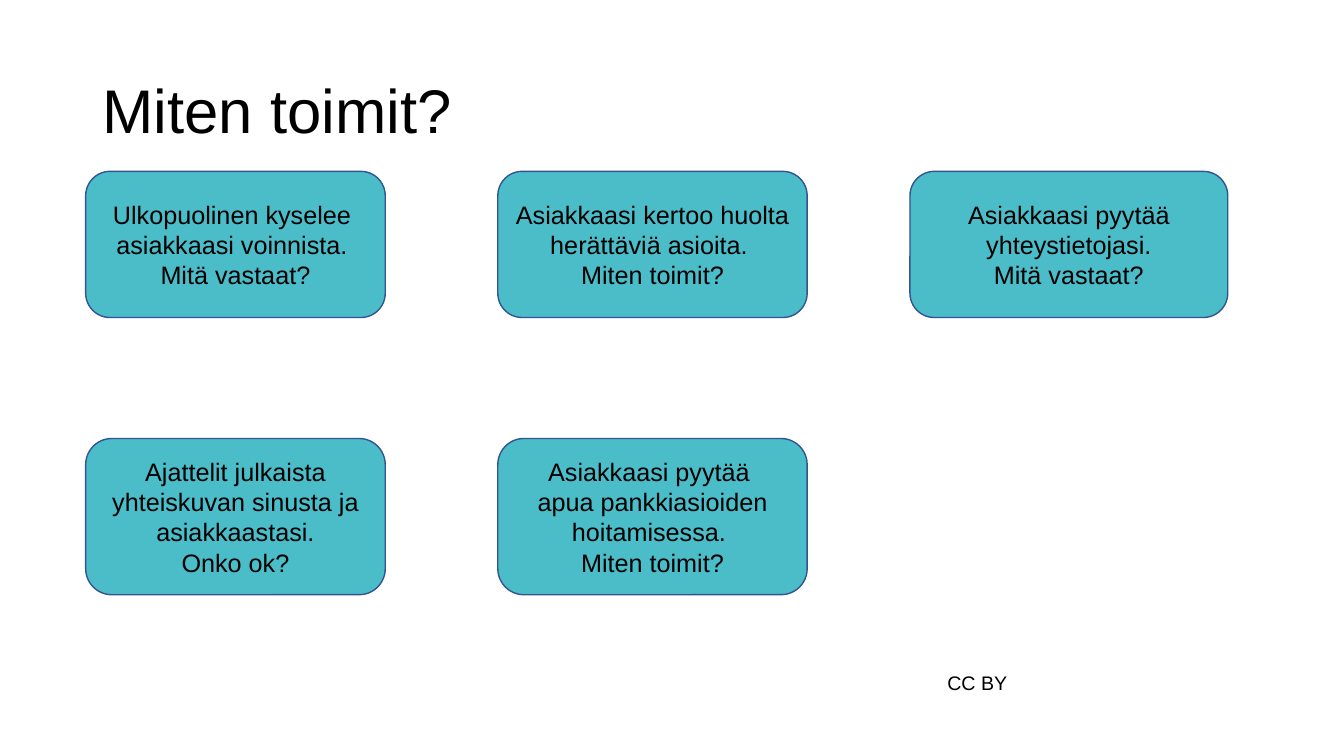
import dataclasses

import pptx
import pptx.dml.color
import pptx.enum.shapes
import pptx.enum.text
import pptx.util

Pt = pptx.util.Pt
RGB = pptx.dml.color.RGBColor
ALIGN = pptx.enum.text.PP_ALIGN
ANCHOR = pptx.enum.text.MSO_ANCHOR


@dataclasses.dataclass(frozen=True)
class Theme:
    """Colours, font and type sizes of the slide."""

    font: str = "Arial"
    text: RGB = RGB(0x00, 0x00, 0x00)
    background: RGB = RGB(0xFF, 0xFF, 0xFF)
    card: RGB = RGB(0x4A, 0xBD, 0xC9)
    border: RGB = RGB(0x32, 0x54, 0x91)
    title_size: int = 44
    card_size: int = 18
    licence_size: int = 14


class SlideBuilder:
    """Draws styled elements on the current slide."""

    def __init__(self, slide, theme):
        """Keep the slide and its theme."""
        self.slide = slide
        self.theme = theme
        slide.background.fill.solid()
        slide.background.fill.fore_color.rgb = theme.background

    def set_lines(self, frame, lines, size, alignment):
        """Set one paragraph per line in the theme's font."""
        for index, line in enumerate(lines):
            paragraph = frame.add_paragraph() if index else frame.paragraphs[0]
            paragraph.text = line
            paragraph.alignment = alignment
            paragraph.font.name = self.theme.font
            paragraph.font.size = Pt(size)
            paragraph.font.color.rgb = self.theme.text

    def title(self, text, left, top, width, height):
        """Place and format the title placeholder."""
        shape = self.slide.shapes.title
        shape.left, shape.top = Pt(left), Pt(top)
        shape.width, shape.height = Pt(width), Pt(height)
        frame = shape.text_frame
        frame.word_wrap = True
        frame.auto_size = pptx.enum.text.MSO_AUTO_SIZE.NONE
        frame.vertical_anchor = ANCHOR.MIDDLE
        self.set_lines(frame, [text], self.theme.title_size, ALIGN.LEFT)
        frame.paragraphs[0].line_spacing = 0.9

    def card(self, lines, left, top, width, height):
        """Add a rounded card with centred text."""
        shape = self.slide.shapes.add_shape(
            pptx.enum.shapes.MSO_SHAPE.ROUNDED_RECTANGLE,
            Pt(left), Pt(top), Pt(width), Pt(height))
        shape.shadow.inherit = False
        shape.fill.solid()
        shape.fill.fore_color.rgb = self.theme.card
        shape.line.color.rgb = self.theme.border
        shape.line.width = Pt(1)
        shape.text_frame.word_wrap = True
        shape.text_frame.vertical_anchor = ANCHOR.MIDDLE
        self.set_lines(shape.text_frame, lines, self.theme.card_size, ALIGN.CENTER)

    def label(self, text, left, top, width, height):
        """Add a one-line text box that fits its text."""
        frame = self.slide.shapes.add_textbox(
            Pt(left), Pt(top), Pt(width), Pt(height)).text_frame
        frame.word_wrap = False
        frame.auto_size = pptx.enum.text.MSO_AUTO_SIZE.SHAPE_TO_FIT_TEXT
        self.set_lines(frame, [text], self.theme.licence_size, ALIGN.LEFT)


CARD_LEFT = 61.2
COLUMN_STEP = 294.4
COLUMN_WIDTHS = [214, 221, 227]
ROWS = [
    (122.4, 104.4, [
        ["Ulkopuolinen kyselee \nasiakkaasi voinnista. ", "Mitä vastaat?"],
        ["Asiakkaasi kertoo huolta herättäviä asioita. ", "Miten toimit?"],
        ["Asiakkaasi pyytää yhteystietojasi.", "Mitä vastaat?"],
    ]),
    (313.2, 111.6, [
        ["Ajattelit julkaista yhteiskuvan sinusta ja asiakkaastasi.", "Onko ok?"],
        ["Asiakkaasi pyytää ", "apua pankkiasioiden hoitamisessa. ", "Miten toimit?"],
    ]),
]


def main():
    """Build and save the slide."""
    presentation = pptx.Presentation()
    presentation.slide_width = Pt(960)
    presentation.slide_height = Pt(540)
    slide = presentation.slides.add_slide(presentation.slide_layouts[5])
    builder = SlideBuilder(slide, Theme())

    builder.title("Miten toimit?", 66, 28.8, 828, 104.4)
    for top, height, cards in ROWS:
        for column, lines in enumerate(cards):
            left = CARD_LEFT + column * COLUMN_STEP
            builder.card(lines, left, top, COLUMN_WIDTHS[column], height)
    builder.label("CC BY", 669.6, 476, 57.6, 24.5)

    presentation.save("out.pptx")


if __name__ == "__main__":
    main()
